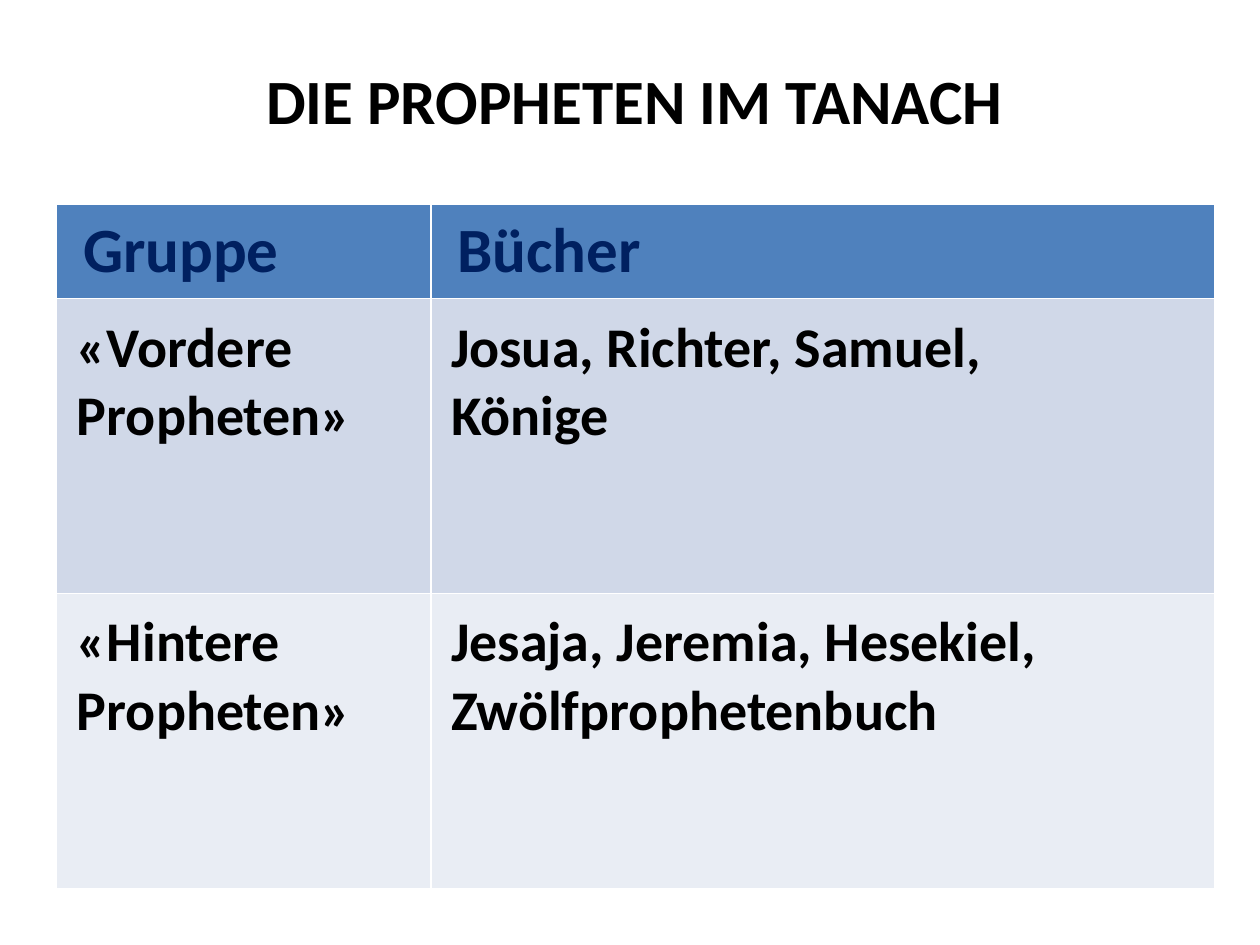
from dataclasses import dataclass

from lxml import etree
from pptx import Presentation
from pptx.dml.color import RGBColor
from pptx.enum import text as t
from pptx.oxml.ns import qn
from pptx.util import Inches, Pt


@dataclass(frozen=True)
class Theme:
    font: str = "Calibri"
    large: int = 36
    body: int = 32
    white: str = "FFFFFF"
    ink: str = "000000"
    navy: str = "002060"
    head: str = "4F81BD"
    bands: tuple = ("D0D8E8", "E9EDF4")


THEME = Theme()
ROWS = [
    ("Gruppe", "Bücher"),
    ("«Vordere Propheten»", "Josua, Richter, Samuel,\vKönige"),
    ("«Hintere Propheten»", "Jesaja, Jeremia, Hesekiel, Zwölfprophetenbuch"),
]


def paint(item, color):
    item.fill.solid()
    item.fill.fore_color.rgb = RGBColor.from_string(color)


def style(frame, size, color):
    for par in frame.paragraphs:
        font = par.font
        font.name, font.size, font.bold = THEME.font, Pt(size), True
        font.color.rgb = RGBColor.from_string(color)


def add_title(slide, left, top, width, height):
    title = slide.shapes.title
    title.left, title.top = Inches(left), Inches(top)
    title.width, title.height = Inches(width), Inches(height)
    paint(title, THEME.white)
    tint = title.fill._xPr.find(qn("a:solidFill"))[0]
    etree.SubElement(tint, qn("a:alpha"), val="60000")
    frame = title.text_frame
    frame.text = "DIE PROPHETEN IM TANACH"
    frame.auto_size = t.MSO_AUTO_SIZE.NONE
    frame.vertical_anchor = t.MSO_ANCHOR.TOP
    frame.paragraphs[0].alignment = t.PP_ALIGN.CENTER
    style(frame, THEME.large, THEME.ink)


def fill_cell(cell, words, row):
    cell.text = words
    if row == 0:
        paint(cell, THEME.head)
        cell.vertical_anchor = t.MSO_ANCHOR.MIDDLE
        cell.margin_left = Inches(0.21)
        style(cell.text_frame, THEME.large, THEME.navy)
    else:
        paint(cell, THEME.bands[(row - 1) % 2])
        cell.margin_left = cell.margin_right = Inches(0.16)
        cell.margin_top = cell.margin_bottom = Inches(0.12)
        style(cell.text_frame, THEME.body, THEME.ink)


def add_books(slide, left, top, width, height):
    """Place the table; its style draws the white rules between cells."""
    first, head = 2.97, 0.75
    table = slide.shapes.add_table(
        len(ROWS), 2, Inches(left), Inches(top), Inches(width), Inches(height)
    ).table
    table.columns[0].width = Inches(first)
    table.columns[1].width = Inches(width - first)
    deep = (height - head) / (len(ROWS) - 1)
    for row, names in enumerate(ROWS):
        table.rows[row].height = Inches(deep if row else head)
        for col, words in enumerate(names):
            fill_cell(table.cell(row, col), words, row)


def main():
    deck = Presentation()
    deck.slide_width, deck.slide_height = Inches(10), Inches(7.5)
    slide = deck.slides.add_slide(deck.slide_layouts[5])
    add_title(slide, 0.43, 0.44, 9.21, 0.63)
    add_books(slide, 0.45, 1.62, 9.19, 5.43)
    deck.save("out.pptx")


if __name__ == "__main__":
    main()
